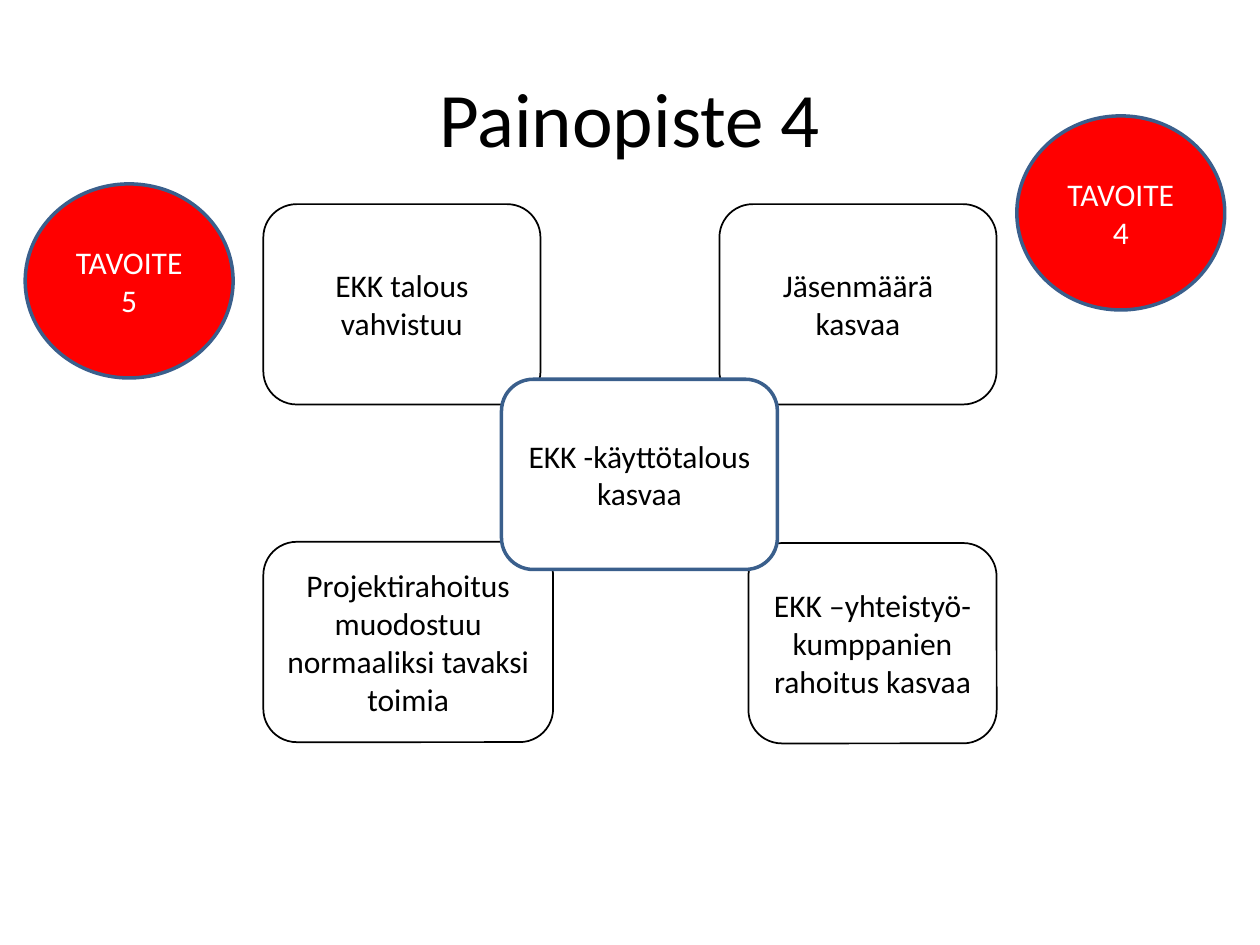
from pptx import Presentation
from pptx.dml.color import RGBColor
from pptx.enum.shapes import MSO_SHAPE
from pptx.enum.text import MSO_ANCHOR, PP_ALIGN
from pptx.util import Inches, Pt

BLACK, WHITE, RED, BLUE = "000000", "FFFFFF", "FF0000", "3A5F8C"


def paint(part, tone):
    """Give a fill, line or font a solid colour from a hex string."""
    if hasattr(part, "solid"):
        part.solid()
        part = part.fore_color
    else:
        part = part.color
    part.rgb = RGBColor.from_string(tone)


def write(shape, text, size, tone):
    """Put centred text in a shape."""
    frame = shape.text_frame
    for name, value in {"word_wrap": True, "vertical_anchor": MSO_ANCHOR.MIDDLE}.items():
        setattr(frame, name, value)
    para = frame.paragraphs[0]
    para.alignment = PP_ALIGN.CENTER
    run = para.add_run()
    run.text = text
    for name, value in {"name": "Calibri", "size": Pt(size)}.items():
        setattr(run.font, name, value)
    paint(run.font, tone)


def add_node(slide, kind, box, text, fill, line, width, tone):
    """Add one filled and outlined shape with its label."""
    shape = slide.shapes.add_shape(kind, *map(Inches, box))
    shape.shadow.inherit = False
    paint(shape.fill, fill)
    paint(shape.line, line)
    shape.line.width = Pt(width)
    write(shape, text, 18, tone)


def add_title(slide, box, text):
    """Add the slide title."""
    write(slide.shapes.add_textbox(*map(Inches, box)), text, 44, BLACK)


def add_goals(slide, box):
    """Add four corner cards and the core card that overlaps them."""
    left, top, width, height = box
    tall = 1.59
    low = top + height - tall
    cards = [
        (0, top, 2.2, "EKK talous vahvistuu"),
        (0, low - 0.01, 2.3, "Projektirahoitus muodostuu normaaliksi tavaksi toimia"),
        (width - 2.2, top, 2.2, "Jäsenmäärä kasvaa"),
        (width - 1.97, low, 1.97, "EKK –yhteistyö-kumppanien rahoitus kasvaa"),
    ]
    card = MSO_SHAPE.ROUNDED_RECTANGLE
    for shift, y, wide, text in cards:
        add_node(slide, card, (left + shift, y, wide, tall), text, WHITE, BLACK, 1, BLACK)
    core = (left + 1.89, top + 1.39, 2.19, 1.51)
    add_node(slide, card, core, "EKK -käyttötalous kasvaa", WHITE, BLUE, 2, BLACK)


def add_targets(slide, box):
    """Add a red target circle at the right top and left bottom of the box."""
    left, top, width, height = box
    wide, tall = 1.65, 1.54
    spots = [(left + width - wide, top, 4), (left, top + height - tall, 5)]
    for x, y, number in spots:
        add_node(slide, MSO_SHAPE.OVAL, (x, y, wide, tall), f"TAVOITE {number}",
                 RED, BLUE, 2, WHITE)


def main():
    """Build and save the slide."""
    deck = Presentation()
    for name, value in {"slide_width": 10, "slide_height": 7.5}.items():
        setattr(deck, name, Inches(value))
    slide = deck.slides.add_slide(deck.slide_layouts[6])
    add_goals(slide, (2.09, 1.62, 5.82, 4.28))
    add_title(slide, (0.5, 0.3, 9, 1.25), "Painopiste 4")
    add_targets(slide, (0.2, 0.92, 9.52, 2.08))
    deck.save("out.pptx")


if __name__ == "__main__":
    main()
